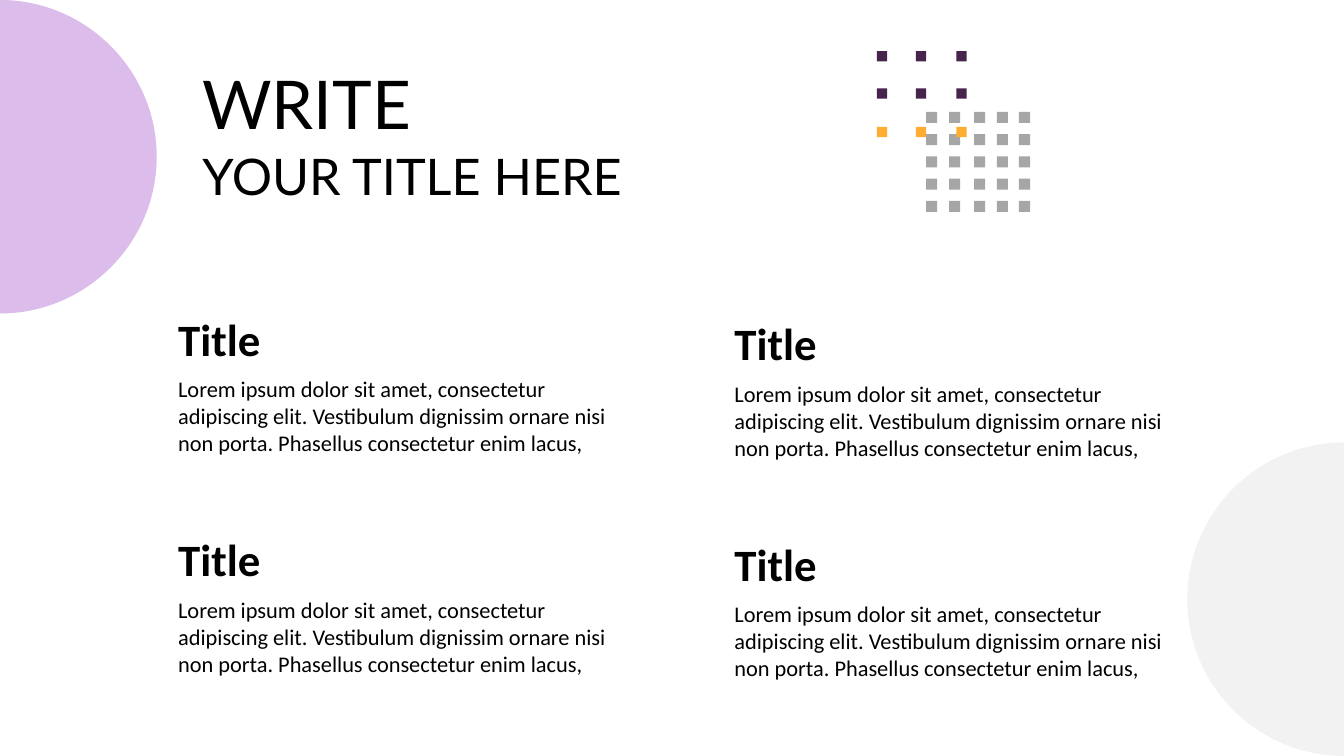
from dataclasses import dataclass

from lxml import etree
from pptx import Presentation
from pptx.dml.color import RGBColor
from pptx.enum.shapes import MSO_SHAPE
from pptx.enum.text import MSO_AUTO_SIZE
from pptx.oxml.ns import qn
from pptx.util import Cm, Pt

RECTANGLE = MSO_SHAPE.RECTANGLE
FIT_SHAPE = MSO_AUTO_SIZE.SHAPE_TO_FIT_TEXT

SLIDE_WIDTH, SLIDE_HEIGHT = 33.87, 19.05
ARC_HANDLE = 0.55  # handle length of a quarter circle, in radii
BODY = ("Lorem ipsum dolor sit amet, consectetur adipiscing elit. Vestibulum "
        "dignissim ornare nisi non porta. Phasellus consectetur enim lacus,")


@dataclass(frozen=True)
class Theme:
    text: str = "000000"
    lilac: str = "993BC7"
    pale: str = "F2F2F2"
    grey: str = "A6A6A6"
    plum: str = "47244C"
    amber: str = "FDAD32"
    heading_font: str = "Lato"
    body_font: str = "Calibri"
    headline_size: int = 48
    subtitle_size: int = 36
    title_size: int = 32
    body_size: int = 16


class SlideBuilder:
    def __init__(self, slide, theme):
        self.slide = slide
        self.theme = theme

    def paint(self, shape, color, opacity=None):
        shape.shadow.inherit = False
        shape.fill.solid()
        shape.fill.fore_color.rgb = RGBColor.from_string(color)
        shape.line.fill.background()
        if opacity is not None:
            color_element = shape.element.spPr.find(".//" + qn("a:srgbClr"))
            etree.SubElement(color_element, qn("a:alpha"), val=str(opacity * 1000))

    def text(self, content, left, top, width, height, **font_format):
        box = self.slide.shapes.add_textbox(Cm(left), Cm(top), Cm(width), Cm(height))
        frame = box.text_frame
        frame.word_wrap = True
        frame.auto_size = FIT_SHAPE
        run = frame.paragraphs[0].add_run()
        run.text = content
        run.font.color.rgb = RGBColor.from_string(self.theme.text)
        for name, value in font_format.items():
            setattr(run.font, name, value)

    def half_disc(self, center_x, center_y, radius, side, color, opacity=None):
        """Draw a half disc that bulges right (side 1) or left (side -1)."""
        top, middle, bottom = [
            (Cm(center_x + side * radius * x), Cm(center_y + radius * y))
            for x, y in ((0, -1), (1, 0), (0, 1))]
        builder = self.slide.shapes.build_freeform(*top)
        builder.add_line_segments([middle, bottom], close=True)
        shape = builder.convert_to_shape()

        # Turn the two straight sides into quarter circles
        quarters = (((ARC_HANDLE, -1), (1, -ARC_HANDLE), (1, 0)),
                    ((1, ARC_HANDLE), (ARC_HANDLE, 1), (0, 1)))
        segments = list(shape.element.spPr.iter(qn("a:lnTo")))
        for segment, quarter in zip(segments, quarters):
            curve = etree.Element(qn("a:cubicBezTo"))
            for x, y in quarter:
                point_x = Cm(center_x + side * radius * x) - shape.left
                point_y = Cm(center_y + radius * y) - shape.top
                etree.SubElement(curve, qn("a:pt"), x=str(point_x), y=str(point_y))
            segment.getparent().replace(segment, curve)
        self.paint(shape, color, opacity)

    def dots(self, lefts, tops, size, color):
        for top in tops:
            for left in lefts:
                dot = self.slide.shapes.add_shape(
                    RECTANGLE, Cm(left), Cm(top), Cm(size), Cm(size))
                self.paint(dot, color)

    def text_block(self, left, top):
        theme = self.theme
        self.text(BODY, left, top + 1.62, 11.63, 2.31,
                  name=theme.body_font, size=Pt(theme.body_size))
        self.text("Title", left, top, 3.84, 1.63,
                  name=theme.body_font, size=Pt(theme.title_size), bold=True)


def main():
    presentation = Presentation()
    presentation.slide_width = Cm(SLIDE_WIDTH)
    presentation.slide_height = Cm(SLIDE_HEIGHT)
    theme = Theme()
    page = SlideBuilder(
        presentation.slides.add_slide(presentation.slide_layouts[6]), theme)

    # Four text blocks, the right column slightly lower
    for left, first_top in ((4.24, 7.72), (18.26, 7.83)):
        for row in range(2):
            page.text_block(left, first_top + 5.56 * row)

    # Half discs on the slide edges
    radius = 3.95
    page.half_disc(SLIDE_WIDTH, SLIDE_HEIGHT - radius, radius, -1, theme.pale)
    page.half_disc(0, radius, radius, 1, theme.lilac, opacity=34)

    # Dot patterns
    grey_lefts = (23.34, 23.92, 24.55, 25.12, 25.68)
    page.dots(grey_lefts, [2.82 + 0.56 * row for row in range(5)], 0.28, theme.grey)
    small_lefts = (22.1, 23.08, 24.1)
    small_rows = ((1.29, theme.plum), (2.23, theme.plum), (3.2, theme.amber))
    for top, color in small_rows:
        page.dots(small_lefts, [top], 0.26, color)

    # Heading
    page.text("WRITE", 4.85, 1.45, 13.41, 2.31,
              name=theme.heading_font, size=Pt(theme.headline_size))
    page.text("YOUR TITLE HERE", 4.85, 3.53, 21.67, 1.8,
              name=theme.heading_font, size=Pt(theme.subtitle_size))

    presentation.save("out.pptx")


if __name__ == "__main__":
    main()
